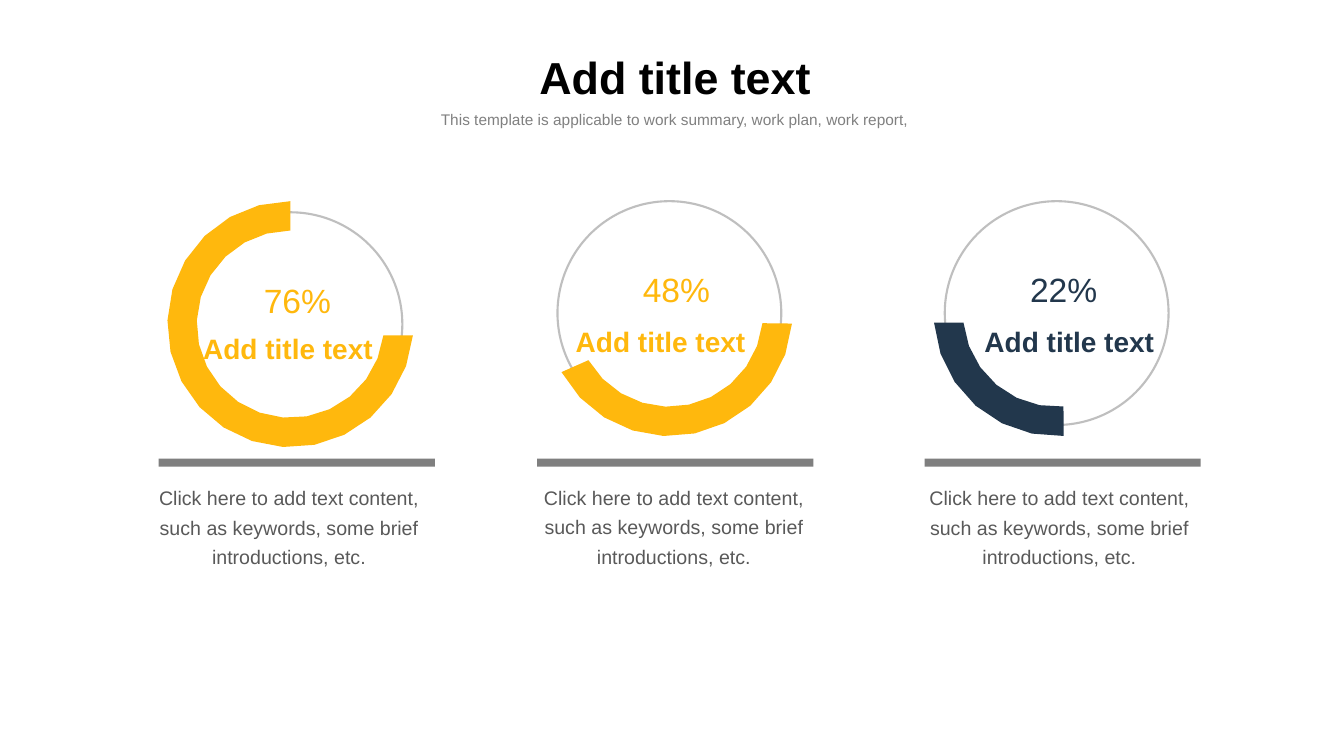
import math

from pptx import Presentation
from pptx import util as u
from pptx.dml.color import RGBColor
from pptx.enum import shapes, text

AMBER, NAVY, GREY = "FFB80D", "22374C", "7F7F7F"
RING_RADIUS, ARC_OUTER, ARC_INNER = 2.82, 3.1, 2.36
ARC_STEP = 15
HEADING = "Add title text"
BODY = "Click here to add text content, such as keywords, some brief introductions, etc."


def rgb(value):
    return RGBColor.from_string(value)


def rim(centre, radius, start, end):
    """Points in EMU along a circle, angles in degrees clockwise from the right."""
    cx, cy = centre
    steps = round(abs(end - start) / ARC_STEP)
    angles = [math.radians(start + (end - start) * i / steps) for i in range(steps + 1)]
    return [(u.Cm(cx + radius * math.cos(a)), u.Cm(cy + radius * math.sin(a))) for a in angles]


class Page:
    font = "Arial"

    def __init__(self, slide):
        self.shapes = slide.shapes

    def paint(self, shape, fill):
        shape.shadow.inherit = False
        shape.fill.solid()
        shape.fill.fore_color.rgb = rgb(fill)
        shape.line.fill.background()

    def ring(self, centre):
        cx, cy = centre
        circle = self.shapes.add_shape(
            shapes.MSO_SHAPE.OVAL, u.Cm(cx - RING_RADIUS), u.Cm(cy - RING_RADIUS),
            u.Cm(2 * RING_RADIUS), u.Cm(2 * RING_RADIUS))
        circle.shadow.inherit = False
        circle.fill.background()
        circle.line.color.rgb = rgb("BFBFBF")
        circle.line.width = u.Pt(1.5)

    def arc(self, centre, outer, inner, color):
        """Thick arc; outer and inner are the (start, end) angles of its two edges."""
        points = rim(centre, ARC_OUTER, *outer) + rim(centre, ARC_INNER, *reversed(inner))
        builder = self.shapes.build_freeform(*points[0])
        builder.add_line_segments(points[1:], close=True)
        self.paint(builder.convert_to_shape(), color)

    def bar(self, left, top, width, height):
        self.paint(self.shapes.add_shape(
            shapes.MSO_SHAPE.RECTANGLE, u.Cm(left), u.Cm(top), u.Cm(width), u.Cm(height)), GREY)

    def label(self, words, box, size, color, bold=False, wrap=False, centred=False, spacing=None):
        frame = self.shapes.add_textbox(*map(u.Cm, box)).text_frame
        frame.word_wrap = wrap
        frame.auto_size = text.MSO_AUTO_SIZE.SHAPE_TO_FIT_TEXT
        paragraph = frame.paragraphs[0]
        paragraph.text = words
        if centred:
            paragraph.alignment = text.PP_ALIGN.CENTER
        if spacing:
            paragraph.line_spacing = spacing
        font = paragraph.font
        font.name, font.size, font.bold = self.font, u.Pt(size), bold
        font.color.rgb = rgb(color)


# share, colour, centre, outer angles, inner angles, heading left and top, bar left, body box
GAUGES = [
    ("76%", AMBER, (7.32, 8.17), (5.2, 270), (6.8, 270), (4.87, 8.22), 4,
     (3.69, 11.98, 7.19, 2.44)),
    ("48%", AMBER, (16.87, 7.89), (4.9, 151.3), (6.2, 149.8), (14.26, 8.05), 13.54,
     (13.24, 11.97, 7.49, 2.44)),
    ("22%", NAVY, (26.63, 7.89), (86.8, 175.6), (85.8, 174.2), (24.56, 8.05), 23.3,
     (23.07, 11.98, 7.26, 2.44)),
]


def main():
    deck = Presentation()
    deck.slide_width, deck.slide_height = u.Cm(33.87), u.Cm(19.05)
    page = Page(deck.slides.add_slide(deck.slide_layouts[6]))

    for share, color, centre, outer, inner, heading_at, bar_left, body_box in GAUGES:
        cx, cy = centre
        page.ring(centre)
        page.arc(centre, outer, inner, color)
        page.label(share, (cx - 0.92, cy - 1.25, 2.29, 1.27), 24, color)
        page.label(HEADING, (*heading_at, 4.83, 1.12), 20, color, bold=True)
        page.bar(bar_left, 11.56, 6.96, 0.2)
        page.label(BODY, body_box, 14, "595959", wrap=True, centred=True, spacing=1.25)

    page.label(HEADING, (13.32, 1.14, 7.39, 1.63), 32, "000000", bold=True, centred=True)
    page.label("This template is applicable to work summary, work plan, work report,",
               (9.22, 2.56, 15.57, 0.76), 11, "808080", wrap=True, centred=True, spacing=1.2)

    deck.save("out.pptx")


if __name__ == "__main__":
    main()
